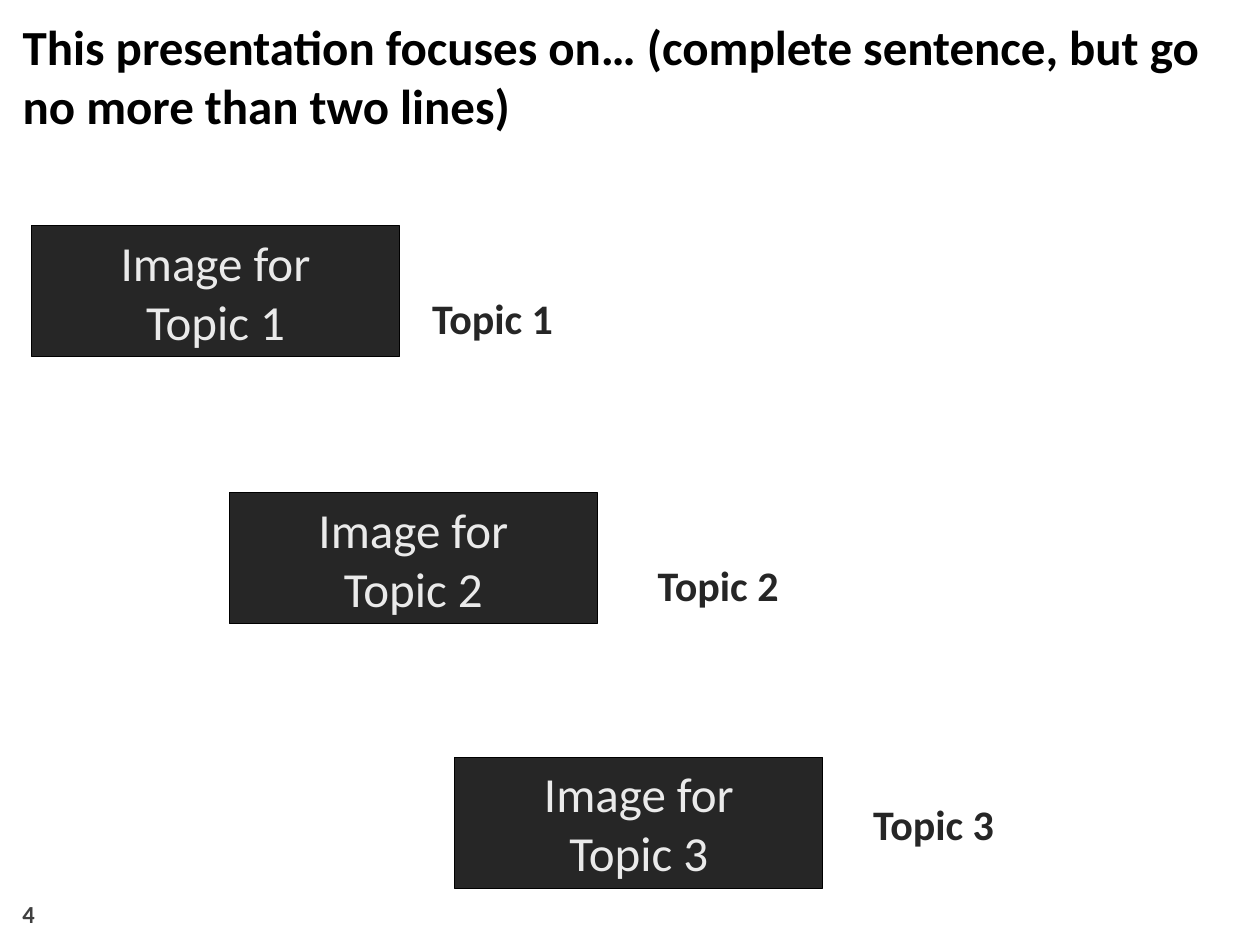
from dataclasses import dataclass

from pptx import Presentation
from pptx.dml.color import RGBColor
from pptx.enum.shapes import MSO_SHAPE as Shape
from pptx.enum.text import MSO_ANCHOR as Anchor, MSO_AUTO_SIZE as AutoSize, PP_ALIGN as Align
from pptx.util import Inches, Pt

COLORS = {"ink": "000000", "panel": "262626", "panel_text": "EAEAEA", "number": "404040"}
FONT = "Calibri"

# Grid of 100 columns by 75 rows over a 10 by 7.5 inch slide
CELL = Inches(0.1)
PANEL_SIZE = (29.2, 10.4)
LABEL_SIZE = (13, 4.6)


@dataclass(frozen=True)
class Topic:
    name: str
    panel_at: tuple[float, float]
    label_at: tuple[float, float]


TOPICS = [
    Topic("Topic 1", (2.5, 17.9), (33.6, 22.9)),
    Topic("Topic 2", (18.2, 39.1), (51.5, 44.1)),
    Topic("Topic 3", (36.1, 60.1), (68.6, 63.1)),
]


def color(name: str) -> RGBColor:
    return RGBColor.from_string(COLORS[name])


def box(at: tuple[float, float], size: tuple[float, float]) -> list[int]:
    """Turn columns and rows into left, top, width and height."""
    return [round(cells * CELL) for cells in (*at, *size)]


def write(shape, text: str, size: int, color_name: str, bold: bool = True,
          align=Align.LEFT, anchor=Anchor.TOP) -> None:
    frame = shape.text_frame
    frame.text = text
    frame.word_wrap = True
    frame.auto_size = AutoSize.NONE
    frame.vertical_anchor = anchor
    for paragraph in frame.paragraphs:
        paragraph.alignment = align
        for run in paragraph.runs:
            run.font.name = FONT
            run.font.size = Pt(size)
            run.font.bold = bold
            run.font.color.rgb = color(color_name)


def draw_title(slide, text: str) -> None:
    title = slide.shapes.title
    title.left, title.top, title.width, title.height = box((0.8, 0.8), (98.8, 10.3))
    write(title, text, 28, "ink")


def draw_topic(slide, topic: Topic) -> None:
    # Label beside the panel
    label = slide.shapes.add_textbox(*box(topic.label_at, LABEL_SIZE))
    write(label, topic.name, 24, "panel")
    frame = label.text_frame
    frame.margin_left = frame.margin_right = Inches(0.07)
    frame.margin_top = frame.margin_bottom = Inches(0.03)

    # Dark panel that holds the place of an image
    panel = slide.shapes.add_shape(Shape.RECTANGLE, *box(topic.panel_at, PANEL_SIZE))
    panel.shadow.inherit = False
    panel.fill.solid()
    panel.fill.fore_color.rgb = color("panel")
    panel.line.color.rgb = color("ink")
    panel.line.width = Pt(0.75)
    write(panel, f"Image for\n{topic.name}", 28, "panel_text", bold=False,
          align=Align.CENTER, anchor=Anchor.MIDDLE)


def main() -> None:
    presentation = Presentation()
    presentation.slide_width = 100 * CELL
    presentation.slide_height = 75 * CELL
    slide = presentation.slides.add_slide(presentation.slide_layouts.get_by_name("Title Only"))

    draw_title(slide, "This presentation focuses on… "
                      "(complete sentence, but go no more than two lines)")
    for topic in TOPICS:
        draw_topic(slide, topic)

    # Page number
    number = slide.shapes.add_textbox(*box((0.8, 70.2), (23.3, 4)))
    write(number, "4", 14, "number", anchor=Anchor.BOTTOM)

    presentation.save("out.pptx")


if __name__ == "__main__":
    main()
